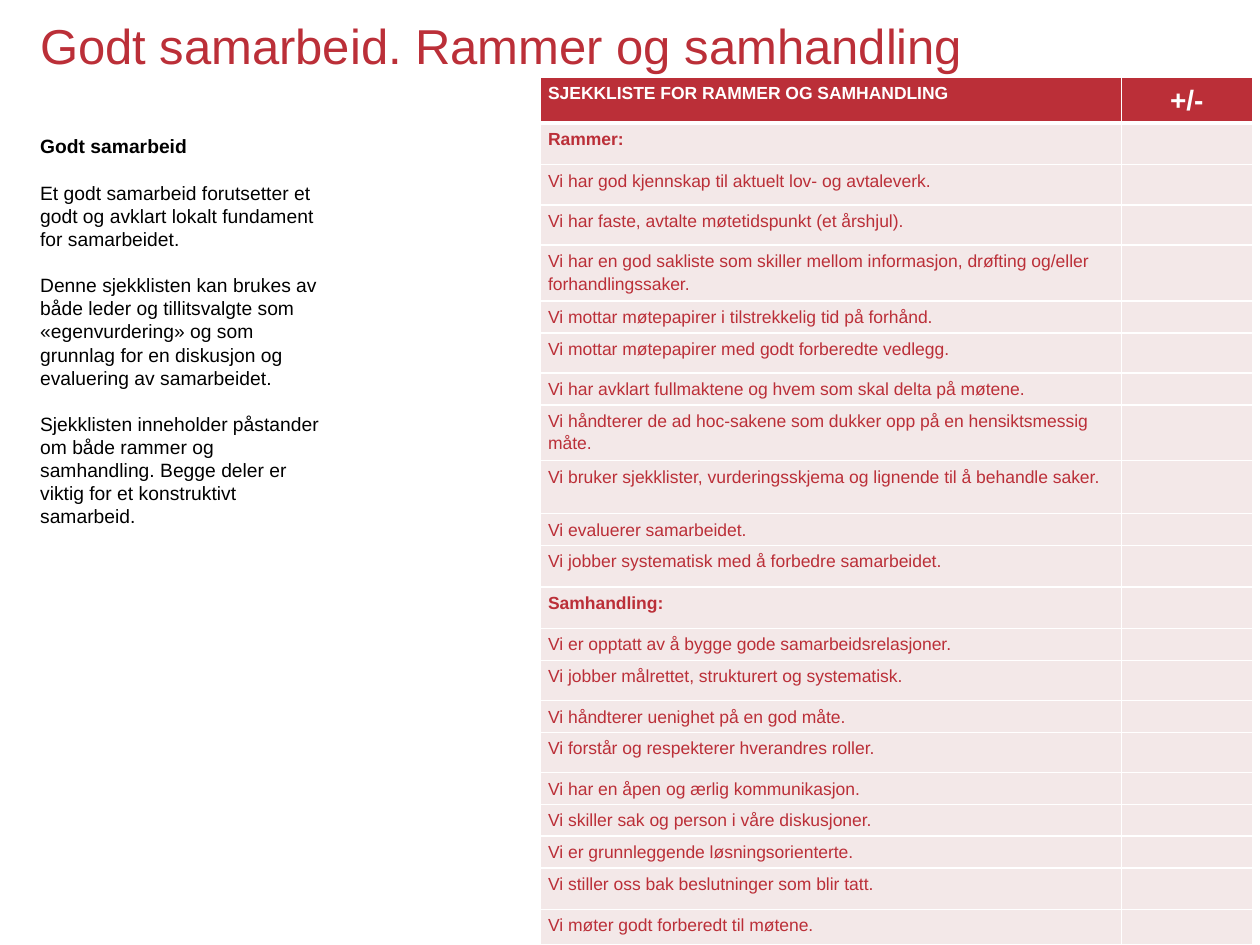
from lxml import etree
from pptx import Presentation
from pptx.dml.color import RGBColor
from pptx.enum import text as t
from pptx.oxml import ns
from pptx.util import Inches, Pt

COLORS = {"red": "BB2F38", "pink": "F3E8E8", "white": "FFFFFF", "black": "000000"}

TITLE = "Godt samarbeid. Rammer og samhandling"
INTRO_HEADING = "Godt samarbeid"
INTRO = [
    "Et godt samarbeid forutsetter et godt og avklart lokalt fundament for samarbeidet.",
    "Denne sjekklisten kan brukes av både leder og tillitsvalgte som «egenvurdering» "
    "og som grunnlag for en diskusjon og evaluering av samarbeidet.",
    "Sjekklisten inneholder påstander om både rammer og samhandling. "
    "Begge deler er viktig for et konstruktivt samarbeid.",
]
HEADER = ("SJEKKLISTE FOR RAMMER OG SAMHANDLING", "+/-")
SECTIONS = ("Rammer:", "Samhandling:")
CHECKLIST = [
    ("Rammer:", 0.33),
    ("Vi har god kjennskap til aktuelt lov- og avtaleverk.", 0.32),
    ("Vi har faste, avtalte møtetidspunkt (et årshjul).", 0.32),
    ("Vi har en god sakliste som skiller mellom informasjon, drøfting og/eller "
     "forhandlingssaker.", 0.44),
    ("Vi mottar møtepapirer i tilstrekkelig tid på forhånd.", 0.25),
    ("Vi mottar møtepapirer med godt forberedte vedlegg.", 0.32),
    ("Vi har avklart fullmaktene og hvem som skal delta på møtene.", 0.25),
    ("Vi håndterer de ad hoc-sakene som dukker opp på en hensiktsmessig måte.", 0.44),
    ("Vi bruker sjekklister, vurderingsskjema og lignende til å behandle saker.", 0.42),
    ("Vi evaluerer samarbeidet.", 0.25),
    ("Vi jobber systematisk med å forbedre samarbeidet.", 0.33),
    ("Samhandling:", 0.33),
    ("Vi er opptatt av å bygge gode samarbeidsrelasjoner.", 0.25),
    ("Vi jobber målrettet, strukturert og systematisk.", 0.32),
    ("Vi håndterer uenighet på en god måte.", 0.25),
    ("Vi forstår og respekterer hverandres roller.", 0.32),
    ("Vi har en åpen og ærlig kommunikasjon.", 0.25),
    ("Vi skiller sak og person i våre diskusjoner.", 0.25),
    ("Vi er grunnleggende løsningsorienterte.", 0.25),
    ("Vi stiller oss bak beslutninger som blir tatt.", 0.33),
    ("Vi møter godt forberedt til møtene.", 0.28),
    ]


def write(paragraph, words, size, color="black", bold=False, align=t.PP_ALIGN.LEFT,
          line_spacing=None, before=0):
    paragraph.alignment = align
    paragraph.line_spacing = line_spacing
    paragraph.space_before = Pt(before)
    run = paragraph.add_run()
    run.text = words
    run.font.name = "Arial"
    run.font.size = Pt(size)
    run.font.bold = bold
    run.font.color.rgb = RGBColor.from_string(COLORS[color])


def add_frame(slide, box, anchor=t.MSO_ANCHOR.TOP):
    frame = slide.shapes.add_textbox(*map(Inches, box)).text_frame
    frame.word_wrap = True
    frame.vertical_anchor = anchor
    return frame


def add_title(slide, box):
    frame = add_frame(slide, box, t.MSO_ANCHOR.MIDDLE)
    write(frame.paragraphs[0], TITLE, 28, "red")


def add_intro(slide, box):
    frame = add_frame(slide, box)
    write(frame.paragraphs[0], INTRO_HEADING, 11, bold=True)
    for words in INTRO:
        write(frame.add_paragraph(), words, 11, before=13.2)


def add_border(cell, side, width):
    line = etree.SubElement(cell._tc.get_or_add_tcPr(), ns.qn(f"a:{side}"), w=str(Pt(width)))
    fill = etree.SubElement(line, ns.qn("a:solidFill"))
    etree.SubElement(fill, ns.qn("a:srgbClr"), val=COLORS["white"])


def format_cell(cell, fill, bottom=1):
    cell.margin_left = cell.margin_right = Inches(0.06)
    cell.margin_top = cell.margin_bottom = Inches(0.03)
    for side, width in (("lnL", 1), ("lnR", 1), ("lnT", 1), ("lnB", bottom)):
        add_border(cell, side, width)
    cell.fill.solid()
    cell.fill.fore_color.rgb = RGBColor.from_string(COLORS[fill])


def add_checklist(slide, box):
    left, top, width, height = map(Inches, box)
    rows = len(CHECKLIST) + 1
    table = slide.shapes.add_table(rows, 2, left, top, width, height).table
    mark_width = Inches(1.04)
    table.columns[0].width = width - mark_width
    table.columns[1].width = mark_width

    table.rows[0].height = Inches(0.35)
    header_formats = ((10, t.PP_ALIGN.LEFT), (16, t.PP_ALIGN.CENTER))
    for column, (words, (size, align)) in enumerate(zip(HEADER, header_formats)):
        cell = table.cell(0, column)
        format_cell(cell, "red", bottom=3)
        write(cell.text_frame.paragraphs[0], words, size, "white", True, align, 1.15)

    for row, (statement, row_height) in enumerate(CHECKLIST, 1):
        table.rows[row].height = Inches(row_height)
        statement_cell, mark_cell = table.cell(row, 0), table.cell(row, 1)
        format_cell(statement_cell, "pink")
        format_cell(mark_cell, "pink")
        write(statement_cell.text_frame.paragraphs[0], statement, 10, "red",
              statement in SECTIONS, line_spacing=1.15)
        empty = mark_cell.text_frame.paragraphs[0]._p
        etree.SubElement(empty, ns.qn("a:endParaRPr"), sz="1000")


def main():
    presentation = Presentation()
    presentation.slide_width = Inches(10)
    presentation.slide_height = Inches(7.5)
    slide = presentation.slides.add_slide(presentation.slide_layouts[6])
    add_title(slide, (0.22, 0, 9, 0.71))
    add_intro(slide, (0.22, 1.02, 2.51, 3.25))
    add_checklist(slide, (4.29, 0.61, 5.65, 6.88))
    presentation.save("out.pptx")


if __name__ == "__main__":
    main()
